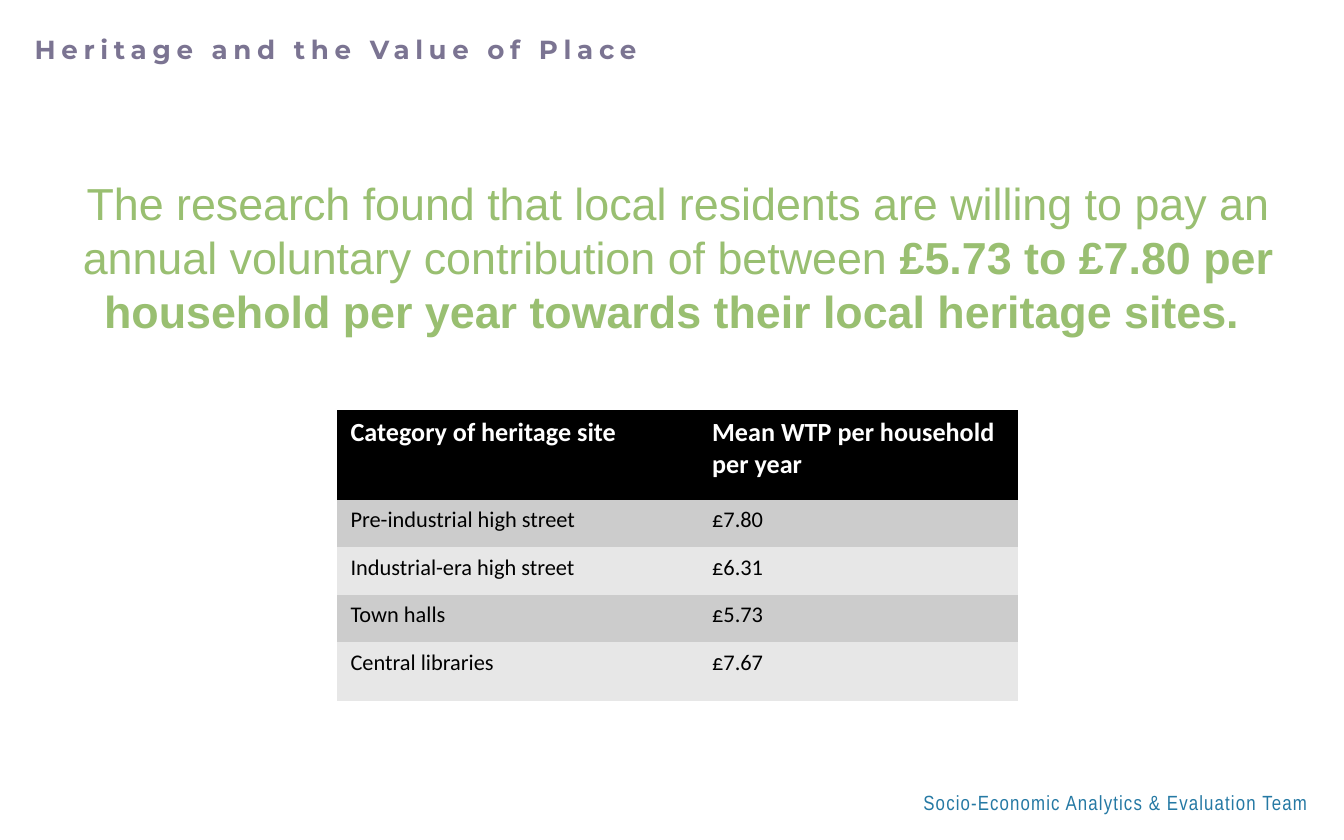
"""Build the slide on household willingness to pay for local heritage."""
from pptx import Presentation
from pptx.dml.color import RGBColor
from pptx.enum.text import MSO_AUTO_SIZE, PP_ALIGN
from pptx.util import Pt

BLACK = RGBColor(0x00, 0x00, 0x00)
WHITE = RGBColor(0xFF, 0xFF, 0xFF)
PURPLE = RGBColor(0x7B, 0x74, 0x92)
GREEN = RGBColor(0x99, 0xBF, 0x71)
BLUE = RGBColor(0x25, 0x79, 0xA4)
BANDS = (RGBColor(0xE7, 0xE7, 0xE7), RGBColor(0xCC, 0xCC, 0xCC))
PLAIN_TABLE_STYLE = "{2D5ABB26-0587-4C30-8999-92F81FD0307C}"

SITES = (
    ("Category of heritage site", "Mean WTP per household \vper year"),
    ("Pre-industrial high street", "£7.80"),
    ("Industrial-era high street", "£6.31"),
    ("Town halls", "£5.73"),
    ("Central libraries", "£7.67"),
)
COLUMN_WIDTHS = (193.7, 171.3)
ROW_HEIGHTS = (48.2, 25.4, 25.4, 25.4, 31.6)


def set_font(paragraph, name, size, color, bold=None):
    font = paragraph.font
    font.name, font.size, font.bold = name, Pt(size), bold
    font.color.rgb = color


def add_text(page, bounds, spans, font, align=PP_ALIGN.LEFT, spacing=0):
    box = page.shapes.add_textbox(*map(Pt, bounds))
    frame = box.text_frame
    frame.word_wrap = True
    frame.auto_size = MSO_AUTO_SIZE.SHAPE_TO_FIT_TEXT
    paragraph = frame.paragraphs[0]
    paragraph.alignment = align
    set_font(paragraph, *font)
    for text, bold in spans:
        span = paragraph.add_run()
        span.text = text
        span.font.bold = bold
        if spacing:
            span._r.get_or_add_rPr().set("spc", str(int(spacing * 100)))


def add_site_table(page, left, top):
    frame = page.shapes.add_table(
        len(SITES), len(COLUMN_WIDTHS), Pt(left), Pt(top),
        Pt(sum(COLUMN_WIDTHS)), Pt(sum(ROW_HEIGHTS)))
    table = frame.table
    table._tbl.tblPr.find("{*}tableStyleId").text = PLAIN_TABLE_STYLE
    for column, width in zip(table.columns, COLUMN_WIDTHS):
        column.width = Pt(width)
    for index, (row, height, texts) in enumerate(zip(table.rows, ROW_HEIGHTS, SITES)):
        row.height = Pt(height)
        header = index == 0
        for cell, text in zip(row.cells, texts):
            cell.text = text
            cell.fill.solid()
            cell.fill.fore_color.rgb = BLACK if header else BANDS[index % 2]
            set_font(cell.text_frame.paragraphs[0], "Calibri",
                     14 if header else 12, WHITE if header else BLACK, header)


def main():
    deck = Presentation()
    deck.slide_width, deck.slide_height = Pt(720), Pt(450)
    page = deck.slides.add_slide(deck.slide_layouts[6])
    add_text(page, (424, 419.8, 283.7, 20.9),
             [("Socio-Economic Analytics & Evaluation Team", None)],
             ("Arial Narrow", 11, BLUE), PP_ALIGN.RIGHT, 0.6)
    add_text(page, (11.5, 14.4, 684, 24.5),
             [("Heritage and the Value of Place", True)],
             ("Montserrat", 14, PURPLE), spacing=3)
    add_text(page, (11.5, 90.7, 703.4, 94.3),
             [("The research found that local residents are willing to pay an "
               "annual voluntary contribution of between ", None),
              ("£5.73 to £7.80 per household per year towards their local "
               "heritage sites. ", True)],
             ("Arial", 24, GREEN), PP_ALIGN.CENTER)
    add_site_table(page, 180.6, 219.6)
    deck.save("out.pptx")


if __name__ == "__main__":
    main()
